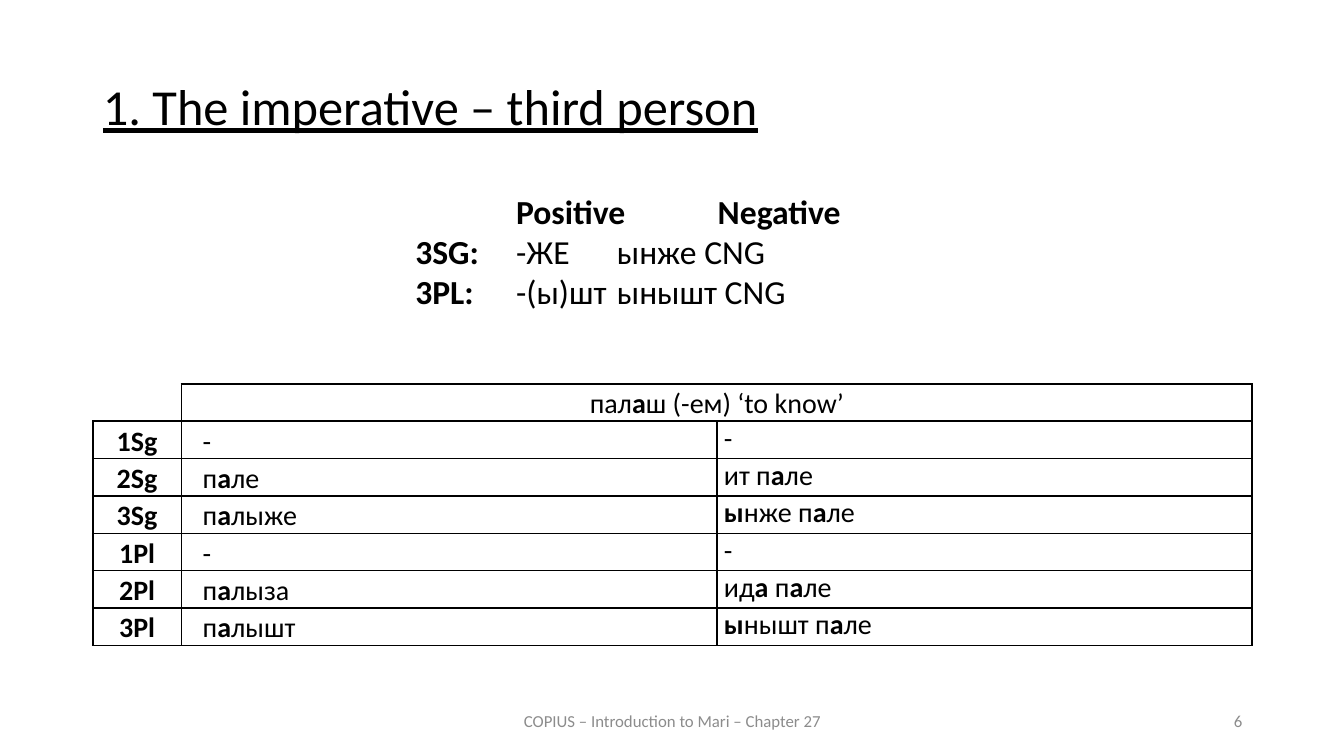
from dataclasses import dataclass

from lxml.etree import SubElement
from pptx import Presentation
from pptx.dml.color import RGBColor
from pptx.enum.text import MSO_ANCHOR, PP_ALIGN
from pptx.oxml.ns import qn
from pptx.util import Inches, Pt


@dataclass(frozen=True)
class Theme:
    font: str = "Calibri"
    ink: str = "000000"
    paper: str = "FFFFFF"
    muted: str = "8C8C8C"
    title: int = 36
    endings: int = 24
    table: int = 20
    footer: int = 12
    frame_line: float = 1.5
    row_line: float = 1


THEME = Theme()


def write(paragraph, text, *, size, color=THEME.ink, align=PP_ALIGN.LEFT,
          underline=None, line_spacing=None):
    """Fill a paragraph; parts between asterisks become bold."""
    paragraph.alignment = align
    paragraph.line_spacing = line_spacing
    paragraph.font.size = Pt(size)
    for index, part in enumerate(text.split("*")):
        if not part:
            continue
        run = paragraph.add_run()
        run.text = part
        run.font.name = THEME.font
        run.font.size = Pt(size)
        run.font.bold = index % 2 == 1
        run.font.underline = underline
        run.font.color.rgb = RGBColor.from_string(color)


def set_tabs(paragraph, stops):
    tabs = SubElement(paragraph._p.get_or_add_pPr(), qn("a:tabLst"))
    for stop in stops:
        SubElement(tabs, qn("a:tab"), pos=str(Inches(stop)), algn="l")


def set_borders(cell, widths):
    """Draw borders from a dict of side letter (L, R, T, B) to points."""
    properties = cell._tc.get_or_add_tcPr()
    for side, width in widths.items():
        line = SubElement(properties, qn(f"a:ln{side}"), w=str(Pt(width)))
        fill = SubElement(line, qn("a:solidFill"))
        SubElement(fill, qn("a:srgbClr"), val=THEME.ink)


class SlideBuilder:
    def __init__(self, presentation, theme):
        self.theme = theme
        self.slide = presentation.slides.add_slide(presentation.slide_layouts[5])

    def title(self, text, left, top, width, height):
        heading = self.slide.shapes.title
        heading.left, heading.top = Inches(left), Inches(top)
        heading.width, heading.height = Inches(width), Inches(height)
        heading.text_frame.vertical_anchor = MSO_ANCHOR.TOP
        write(heading.text_frame.paragraphs[0], text, size=self.theme.title,
              align=PP_ALIGN.JUSTIFY, underline=True, line_spacing=0.9)

    def text(self, lines, left, top, width, height, *, anchor=MSO_ANCHOR.TOP,
             tabs=(), **text_format):
        box = self.slide.shapes.add_textbox(
            Inches(left), Inches(top), Inches(width), Inches(height))
        frame = box.text_frame
        frame.word_wrap = True
        frame.vertical_anchor = anchor
        for index, line in enumerate(lines):
            paragraph = frame.add_paragraph() if index else frame.paragraphs[0]
            write(paragraph, line, **text_format)
            if tabs:
                set_tabs(paragraph, tabs)

    def footer(self, text, left, width, align):
        self.text([text], left, 6.95, width, 0.4, anchor=MSO_ANCHOR.MIDDLE,
                  size=self.theme.footer, color=self.theme.muted, align=align)

    def paradigm(self, rows, left, top, column_widths, row_height):
        """Add a conjugation table whose first row spans all form columns."""
        table = self.slide.shapes.add_table(
            len(rows), len(column_widths), Inches(left), Inches(top),
            Inches(sum(column_widths)), Inches(row_height * len(rows))).table
        table.first_row = table.horz_banding = False
        for column, width in zip(table.columns, column_widths):
            column.width = Inches(width)
        for row_index, forms in enumerate(rows):
            table.rows[row_index].height = Inches(row_height)
            for column_index, form in enumerate(forms):
                cell = table.cell(row_index, column_index)
                self.paradigm_cell(cell, form, row_index, column_index,
                                   row_index == len(rows) - 1)
        table.cell(0, 1).merge(table.cell(0, len(column_widths) - 1))

    def paradigm_cell(self, cell, form, row, column, is_last):
        frame, inner = self.theme.frame_line, self.theme.row_line
        borders = {"L": frame, "R": frame,
                   "T": frame if row < 2 else inner,
                   "B": frame if row == 0 or is_last else inner}
        if row == column == 0:
            borders = {"R": frame, "B": frame}
        set_borders(cell, borders)
        cell.fill.solid()
        cell.fill.fore_color.rgb = RGBColor.from_string(self.theme.paper)
        is_negative = column == 2
        cell.margin_left = cell.margin_right = Inches(0.07 if is_negative else 0.21)
        cell.margin_top = Inches(0 if is_negative else 0.03)
        cell.margin_bottom = 0
        centred = row == 0 or column == 0
        write(cell.text_frame.paragraphs[0], form, size=self.theme.table,
              align=PP_ALIGN.CENTER if centred else PP_ALIGN.JUSTIFY)


ENDINGS = [
    "\t*Positive\tNegative*",
    "*3SG:*\t-ЖЕ\tынже CNG",
    "*3PL:*\t-(ы)шт\tынышт CNG",
]

CONJUGATION = [
    ("", "пал*а*ш (-ем) ‘to know’", ""),
    ("*1Sg*", "-", "-"),
    ("*2Sg*", "п*а*ле", "ит п*а*ле"),
    ("*3Sg*", "п*а*лыже", "*ы*нже п*а*ле"),
    ("*1Pl*", "-", "-"),
    ("*2Pl*", "п*а*лыза", "ид*а *п*а*ле"),
    ("*3Pl*", "п*а*лышт", "*ы*нышт п*а*ле"),
]


def main():
    presentation = Presentation()
    presentation.slide_width = Inches(13.33)
    presentation.slide_height = Inches(7.5)

    builder = SlideBuilder(presentation, THEME)
    builder.paradigm(CONJUGATION, 0.92, 3.81, (0.88, 5.31, 5.31), 0.37)
    builder.title("1. The imperative – third person", 0.92, 0.76, 11.5, 0.83)
    builder.footer("COPIUS – Introduction to Mari – Chapter 27", 4.42, 4.5,
                   PP_ALIGN.CENTER)
    builder.footer("6", 9.42, 3, PP_ALIGN.RIGHT)
    builder.text(ENDINGS, 4.02, 1.84, 5.29, 1.31, tabs=(1, 2, 3),
                 size=THEME.endings)
    presentation.save("out.pptx")


if __name__ == "__main__":
    main()
